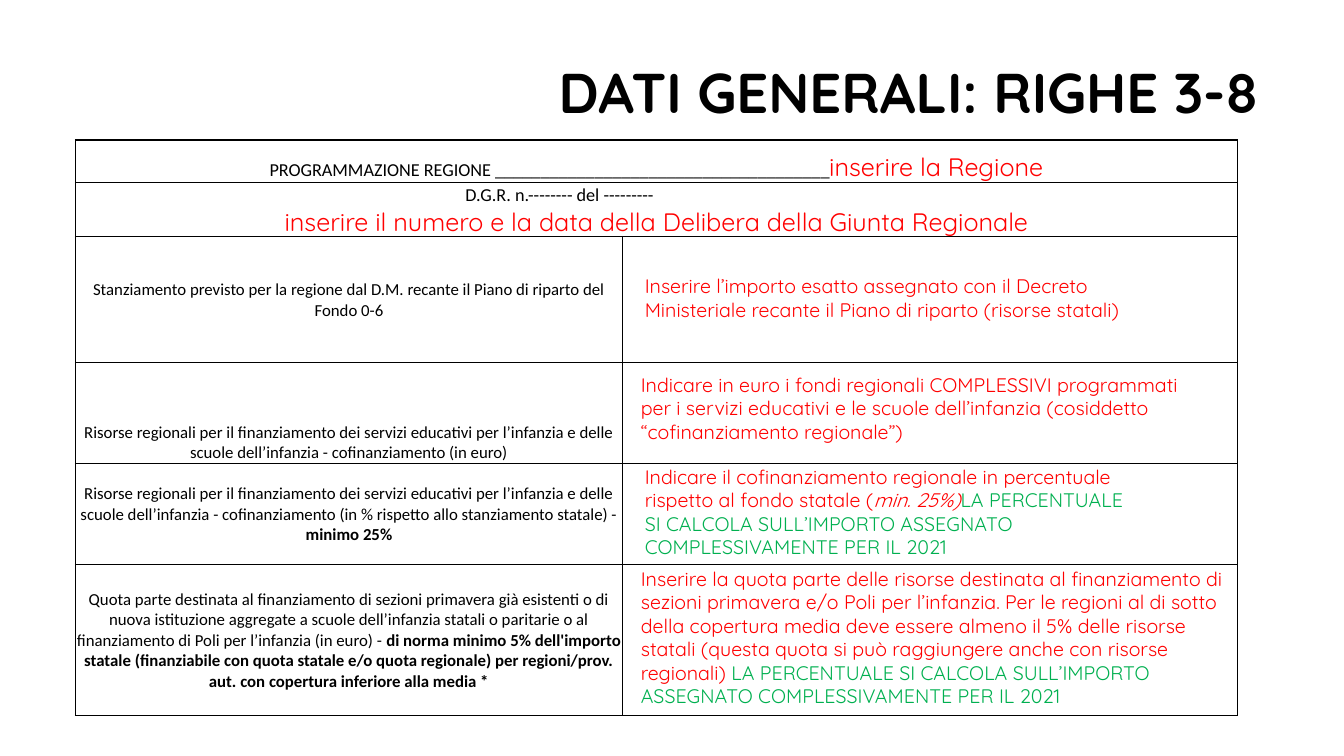
from lxml.etree import SubElement
from pptx import Presentation
from pptx.dml.color import RGBColor
from pptx.enum.text import MSO_ANCHOR as Anchor, MSO_AUTO_SIZE as AutoSize, PP_ALIGN as Align
from pptx.oxml.ns import qn
from pptx.util import Cm, Pt

BLACK, RED, GREEN = "000000", "FF0000", "00B050"

STYLES = {
    "title": ("Quicksand", 40, BLACK, True, False),
    "heading": ("Calibri", 13, BLACK, False, False),
    "heading note": ("Quicksand", 18, RED, False, False),
    "label": ("Calibri", 12, BLACK, False, False),
    "label bold": ("Calibri", 12, BLACK, True, False),
    "note": ("Quicksand", 14, RED, False, False),
    "note italic": ("Quicksand", 14, RED, False, True),
    "warning": ("Quicksand", 14, GREEN, False, False),
}

TITLE = [("DATI GENERALI: RIGHE 3-8", "title")]
PERCENTAGE_RULE = (
    "LA PERCENTUALE SI CALCOLA SULL’IMPORTO ASSEGNATO COMPLESSIVAMENTE PER IL 2021",
    "warning",
)

HEADINGS = [
    [[("PROGRAMMAZIONE REGIONE _____________________________________", "heading"),
      ("inserire la Regione", "heading note")]],
    [[("D.G.R. n.-------- del ---------", "heading")],
     [("inserire il numero e la data della Delibera della Giunta Regionale", "heading note")]],
]

LABELS = [
    (Anchor.MIDDLE, [
        ("Stanziamento previsto per la regione dal D.M. recante il Piano di riparto del Fondo 0-6",
         "label")]),
    (Anchor.BOTTOM, [
        ("Risorse regionali per il finanziamento dei servizi educativi per l’infanzia e delle "
         "scuole dell’infanzia - cofinanziamento (in euro)", "label")]),
    (Anchor.MIDDLE, [
        ("Risorse regionali per il finanziamento dei servizi educativi per l’infanzia e delle "
         "scuole dell’infanzia - cofinanziamento (in % rispetto allo stanziamento statale) - ",
         "label"),
        ("minimo 25%", "label bold")]),
    (Anchor.MIDDLE, [
        ("Quota parte destinata al finanziamento di sezioni primavera già esistenti o di nuova "
         "istituzione aggregate a scuole dell’infanzia statali o paritarie o al finanziamento di "
         "Poli per l’infanzia (in euro) - ", "label"),
        ("di norma minimo 5% dell'importo statale (finanziabile con quota statale e/o quota "
         "regionale) per regioni/prov. aut. con copertura inferiore alla media *", "label bold")]),
]

NOTES = [
    ((16, 6.78, 13.79, 1.45), [
        ("Inserire l’importo esatto assegnato con il Decreto Ministeriale recante il Piano di "
         "riparto (risorse statali)", "note")]),
    ((15.9, 9.27, 14.3, 2.06), [
        ("Indicare in euro i fondi regionali COMPLESSIVI programmati per i servizi educativi e "
         "le scuole dell’infanzia (cosiddetto “cofinanziamento regionale”)", "note")]),
    ((16, 11.58, 13.03, 2.64), [
        ("Indicare il cofinanziamento regionale in percentuale rispetto al fondo statale (",
         "note"),
        ("min. 25%)", "note italic"),
        PERCENTAGE_RULE]),
    ((15.9, 14.15, 15.6, 3.84), [
        ("Inserire la quota parte delle risorse destinata al finanziamento di sezioni primavera "
         "e/o Poli per l’infanzia. Per le regioni al di sotto della copertura media deve essere "
         "almeno il 5% delle risorse statali (questa quota si può raggiungere anche con risorse "
         "regionali) ", "note"),
        PERCENTAGE_RULE]),
]

TITLE_BOX = (13.06, 0.61, 18.9, 3.58)
TABLE_LEFT, TABLE_TOP = 1.9, 3.53
COLUMN_WIDTHS = [13.79, 15.49]
ROW_HEIGHTS = [1.07, 1.36, 3.18, 2.54, 2.54, 3.81]
DECREE_INDENT = 9.8


def color(value):
    return RGBColor.from_string(value)


def write(paragraph, pieces, alignment):
    paragraph.alignment = alignment
    for text, style in pieces:
        run = paragraph.add_run()
        run.text = text
        font = run.font
        font.name, size, shade, font.bold, font.italic = STYLES[style]
        font.size = Pt(size)
        font.color.rgb = color(shade)


def add_text(slide, box, pieces, alignment=Align.LEFT):
    shape = slide.shapes.add_textbox(*map(Cm, box))
    shape.text_frame.word_wrap = True
    write(shape.text_frame.paragraphs[0], pieces, alignment)
    return shape.text_frame


def add_borders(cell):
    properties = cell._tc.get_or_add_tcPr()
    for side in ("a:lnL", "a:lnR", "a:lnT", "a:lnB"):
        line = SubElement(properties, qn(side), w=str(Pt(1)))
        fill = SubElement(line, qn("a:solidFill"))
        SubElement(fill, qn("a:srgbClr"), val=BLACK)


def fill_cell(cell, paragraphs, anchor):
    cell.vertical_anchor = anchor
    cell.margin_left = cell.margin_right = cell.margin_top = Cm(0.03)
    cell.margin_bottom = 0
    frame = cell.text_frame
    for number, pieces in enumerate(paragraphs):
        paragraph = frame.add_paragraph() if number else frame.paragraphs[0]
        write(paragraph, pieces, Align.CENTER)


def add_programme_table(slide):
    table = slide.shapes.add_table(
        len(ROW_HEIGHTS), len(COLUMN_WIDTHS), Cm(TABLE_LEFT), Cm(TABLE_TOP),
        Cm(sum(COLUMN_WIDTHS)), Cm(sum(ROW_HEIGHTS))).table
    table.first_row = table.horz_banding = False
    for column, width in zip(table.columns, COLUMN_WIDTHS):
        column.width = Cm(width)
    for row, height in zip(table.rows, ROW_HEIGHTS):
        row.height = Cm(height)
    for cell in table.iter_cells():
        add_borders(cell)
        cell.fill.background()
    for row, paragraphs in enumerate(HEADINGS):
        table.cell(row, 0).merge(table.cell(row, 1))
        fill_cell(table.cell(row, 0), paragraphs, Anchor.BOTTOM)
    for row, (anchor, pieces) in enumerate(LABELS, len(HEADINGS)):
        fill_cell(table.cell(row, 0), [pieces], anchor)
    decree = table.cell(1, 0).text_frame.paragraphs[0]
    decree.alignment = Align.LEFT
    decree._p.get_or_add_pPr().set("marL", str(Cm(DECREE_INDENT)))


def main():
    presentation = Presentation()
    presentation.slide_width, presentation.slide_height = Cm(33.87), Cm(19.05)
    slide = presentation.slides.add_slide(presentation.slide_layouts[6])
    title = add_text(slide, TITLE_BOX, TITLE, Align.RIGHT)
    title.vertical_anchor = Anchor.MIDDLE
    title.paragraphs[0].line_spacing = 0.9
    add_programme_table(slide)
    for box, pieces in NOTES:
        add_text(slide, box, pieces).auto_size = AutoSize.SHAPE_TO_FIT_TEXT
    presentation.save("out.pptx")


if __name__ == "__main__":
    main()
